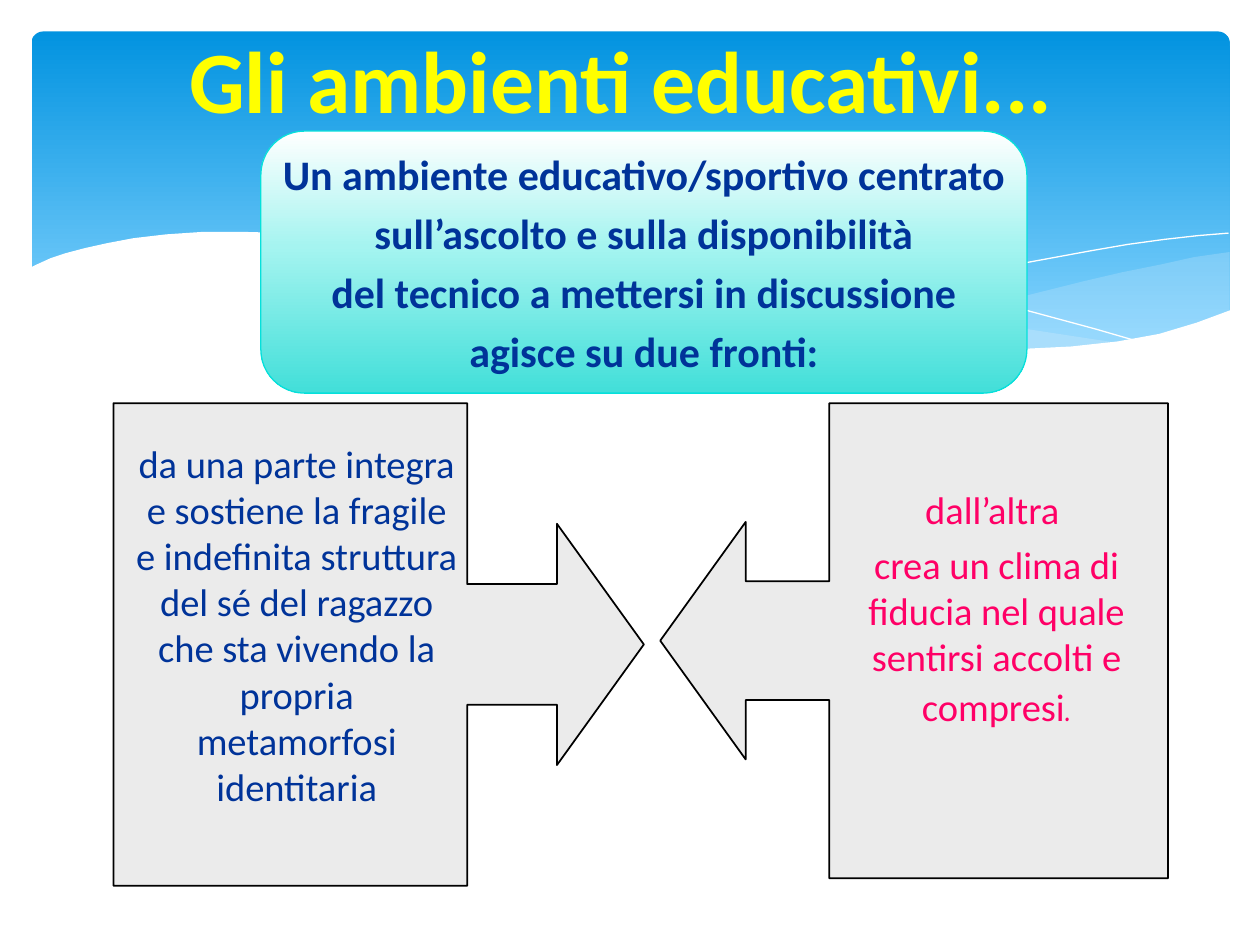
from lxml import etree
from pptx import Presentation
from pptx.dml.color import RGBColor
from pptx.enum.shapes import MSO_SHAPE
from pptx.enum.text import MSO_ANCHOR, PP_ALIGN
from pptx.oxml.ns import qn
from pptx.util import Inches, Pt

CENTER = PP_ALIGN.CENTER
MIDDLE = MSO_ANCHOR.MIDDLE
ROUNDED = MSO_SHAPE.ROUNDED_RECTANGLE
ALTERNATE_PROCESS = MSO_SHAPE.FLOWCHART_ALTERNATE_PROCESS
LEFT_CALLOUT = MSO_SHAPE.LEFT_ARROW_CALLOUT
RIGHT_CALLOUT = MSO_SHAPE.RIGHT_ARROW_CALLOUT

FONT = "Calibri"
NAVY = "003399"
PINK = "FF0066"
WHITE = "FFFFFF"
PALE_BLUE = "C6E7FC"

RIGHT_WAVE = [
    (9.76, 2), (9.48, 2.04), (9.21, 2.1), (8.91, 2.16), (8.61, 2.23), (8.05, 2.37),
    (7.53, 2.48), (7.06, 2.57), (6.61, 2.65), (6.91, 2.69), (7.19, 2.72), (7.45, 2.75),
    (7.69, 2.77), (8.03, 2.78), (8.35, 2.77), (8.63, 2.75), (8.89, 2.72), (9.13, 2.67),
    (9.35, 2.62), (9.63, 2.52), (9.76, 2.47),
]
MIDDLE_WAVE = [
    (8.93, 2.73), (8.66, 2.69), (8.07, 2.6), (7.41, 2.47), (6.68, 2.31), (6.29, 2.22),
    (5.84, 2.11), (5.41, 2.03), (5.02, 1.96), (4.65, 1.91), (4.2, 1.87), (3.8, 1.85),
    (3.44, 1.86), (3.13, 1.88), (2.86, 1.91), (3.23, 1.96), (3.62, 2.03), (4.04, 2.11),
    (4.49, 2.22), (5.3, 2.4), (6.01, 2.55), (6.5, 2.64), (6.95, 2.7), (7.36, 2.75),
    (7.73, 2.77), (8.18, 2.78), (8.57, 2.77), (8.93, 2.73),
]
LONG_LINE = [
    (3.09, 1.95), (3.28, 1.92), (3.53, 1.89), (3.87, 1.87), (4.33, 1.87), (4.69, 1.89),
    (5.1, 1.92), (5.56, 1.97), (6.08, 2.04), (6.65, 2.13), (7.27, 2.26), (7.95, 2.41),
    (8.69, 2.61), (9.07, 2.72),
]
SHORT_LINE = [
    (6.13, 2.57), (6.53, 2.46), (6.95, 2.35), (7.48, 2.23), (8.06, 2.1), (8.66, 1.99),
    (8.95, 1.94), (9.24, 1.9), (9.51, 1.87), (9.75, 1.85),
]
WHITE_WAVE = [
    (9.77, 2.46), (9.5, 2.56), (9.2, 2.65), (8.87, 2.71), (8.5, 2.75), (8.09, 2.77),
    (7.61, 2.75), (7.08, 2.7), (6.48, 2.62), (5.79, 2.5), (5.29, 2.39), (4.75, 2.27),
    (4.18, 2.13), (3.65, 2.02), (3.16, 1.94), (2.71, 1.88), (2.3, 1.85), (1.93, 1.84),
    (1.61, 1.84), (1.32, 1.86), (1.06, 1.89), (0.85, 1.93), (0.67, 1.97), (0.52, 2.01),
    (0.4, 2.05), (0.29, 2.1), (0.23, 2.13), (0.23, 3.29), (9.77, 3.29),
]


def color(value):
    return RGBColor.from_string(value)


def paint(shape, fill=None, alpha=100, line=None, width=1):
    shape.shadow.inherit = False
    if fill:
        shape.fill.solid()
        shape.fill.fore_color.rgb = color(fill)
        if alpha < 100:
            value = shape.fill._xPr.find(".//" + qn("a:srgbClr"))
            etree.SubElement(value, qn("a:alpha"), val=str(alpha * 1000))
    else:
        shape.fill.background()
    if line:
        shape.line.color.rgb = color(line)
        shape.line.width = Pt(width)
    else:
        shape.line.fill.background()


def paint_gradient(shape, stops):
    shape.fill.gradient()
    shape.fill.gradient_angle = 270
    stop_list = shape.fill._fill._gradFill.find(qn("a:gsLst"))
    for old_stop in list(stop_list):
        stop_list.remove(old_stop)
    for position, value in stops:
        stop = etree.SubElement(stop_list, qn("a:gs"), pos=str(position * 1000))
        etree.SubElement(stop, qn("a:srgbClr"), val=value)


def add_preset(slide, kind, box, adjustments=(), **paint_format):
    shape = slide.shapes.add_shape(kind, *map(Inches, box))
    for index, value in enumerate(adjustments):
        shape.adjustments[index] = value
    paint(shape, **paint_format)
    return shape


def add_curve(slide, points, closed=True, **paint_format):
    start, *others = [(Inches(x), Inches(y)) for x, y in points]
    builder = slide.shapes.build_freeform(*start)
    builder.add_line_segments(others, close=closed)
    paint(builder.convert_to_shape(), **paint_format)


def add_run(paragraph, text, size, value, bold=False, font=FONT):
    run = paragraph.add_run()
    run.text = text
    run.font.name = font
    run.font.size = Pt(size)
    run.font.bold = bold
    run.font.color.rgb = color(value)


def write(shape, text, wrap=True, anchor=None, spacing=0, **run_format):
    frame = shape.text_frame
    frame.word_wrap = wrap
    if anchor is not None:
        frame.vertical_anchor = anchor
    for index, line in enumerate(text.split("\n")):
        paragraph = frame.add_paragraph() if index else frame.paragraphs[0]
        paragraph.alignment = CENTER
        paragraph.space_before = Pt(spacing if index else 0)
        add_run(paragraph, line, **run_format)
    return paragraph


def add_text(slide, box, text, **text_format):
    return write(slide.shapes.add_textbox(*map(Inches, box)), text, **text_format)


def add_header(slide):
    banner = add_preset(slide, ROUNDED, (0.25, 0.25, 9.51, 2.7), [0.034])
    paint_gradient(banner, [(0, "0293E0"), (90, "83D3FE")])
    add_curve(slide, RIGHT_WAVE, fill=PALE_BLUE, alpha=29)
    add_curve(slide, MIDDLE_WAVE, fill=PALE_BLUE, alpha=40)
    for points in (LONG_LINE, SHORT_LINE):
        add_curve(slide, points, closed=False, line=WHITE, width=0)
    add_curve(slide, WHITE_WAVE, fill=WHITE)


def add_title(slide, text):
    title = slide.shapes.title
    title.left, title.top, title.width, title.height = map(Inches, (0.43, 0, 9, 1.25))
    write(title, text, anchor=MIDDLE, size=50, value="FFFF00", bold=True)
    title.element.getparent().append(title.element)


def main():
    presentation = Presentation()
    presentation.slide_width = Inches(10)
    presentation.slide_height = Inches(7.5)
    slide = presentation.slides.add_slide(presentation.slide_layouts[5])

    add_header(slide)
    for kind, box in (
        (LEFT_CALLOUT, (5.24, 3.2, 4.03, 3.77)),
        (RIGHT_CALLOUT, (0.9, 3.2, 4.21, 3.83)),
    ):
        add_preset(slide, kind, box, [0.25, 0.25, 0.18, 0.667],
                   fill="D9D9D9", alpha=50, line="000000")
    add_title(slide, "Gli ambienti educativi...")

    add_text(slide, (0.98, 3.44, 2.75, 3.43),
             "da una parte integra e sostiene la fragile e indefinita struttura "
             "del sé del ragazzo che sta vivendo la propria metamorfosi identitaria",
             size=22, value=NAVY)
    closing = add_text(slide, (6.73, 3.81, 2.36, 2.06),
                       "dall’altra \ncrea un clima di fiducia nel quale "
                       "sentirsi accolti e compresi",
                       spacing=4.8, size=22, value=PINK)
    add_run(closing, ".", size=24, value=PINK, font="Comic Neue")

    summary = add_preset(slide, ALTERNATE_PROCESS, (2.07, 1.04, 6.08, 2.08),
                         line="05E0DB", width=0.75)
    paint_gradient(summary, [(0, WHITE), (44, "A5F4F0"), (100, "42DFD9")])
    write(summary,
          "Un ambiente educativo/sportivo centrato\n"
          "sull’ascolto e sulla disponibilità\n"
          "del tecnico a mettersi in discussione\n"
          "agisce su due fronti:",
          wrap=False, anchor=MIDDLE, spacing=4.8, size=24, value=NAVY, bold=True)

    presentation.save("out.pptx")


if __name__ == "__main__":
    main()
